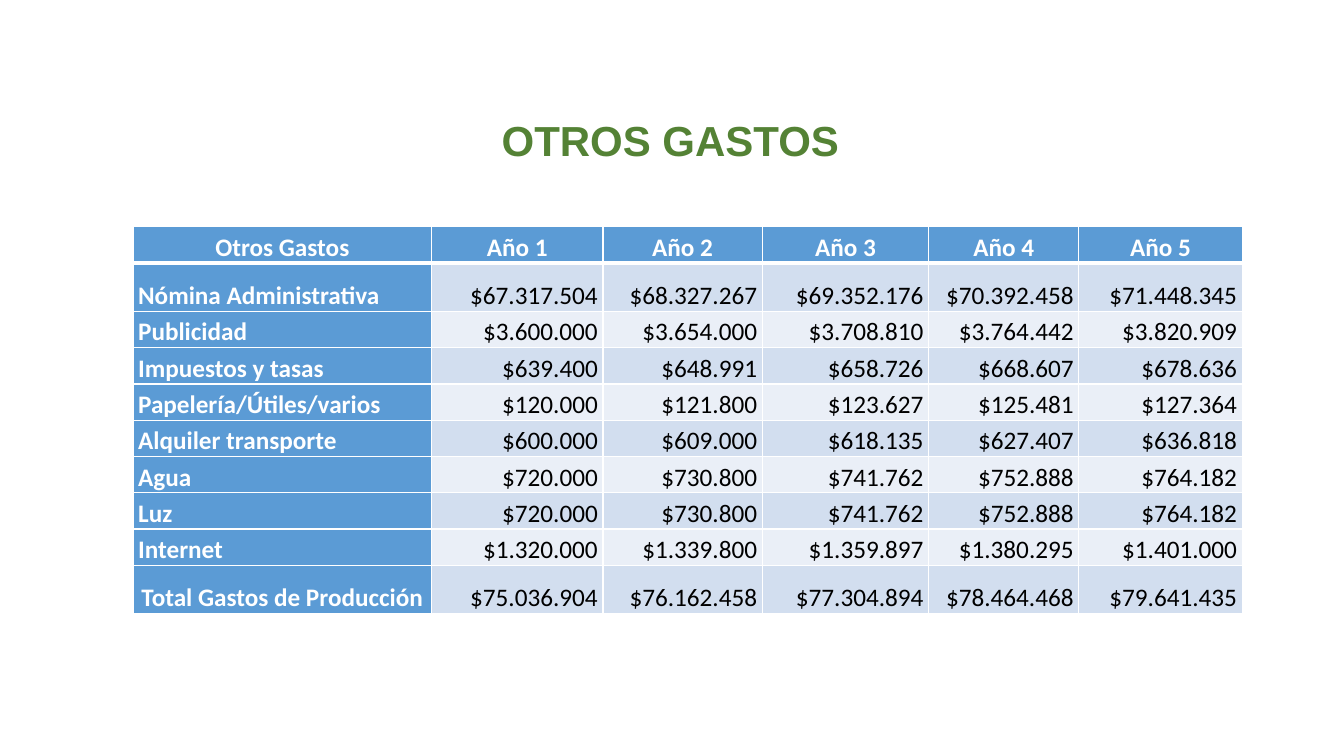
from lxml.etree import SubElement
from pptx import Presentation
from pptx.dml.color import RGBColor
from pptx.enum.text import MSO_ANCHOR, PP_ALIGN
from pptx.oxml.ns import qn
from pptx.util import Inches, Pt

WHITE, BLACK, GREEN = "FFFFFF", "000000", "548235"
BLUE, BANDS = "5B9BD5", ("EAEFF7", "D2DEEF")
WIDTHS = (2.96, 1.7, 1.58, 1.65, 1.49, 1.62)
HEIGHTS = (0.36, 0.48, *[0.36] * 7, 0.48)
ROWS = (
    ("Otros Gastos", "Año 1", "Año 2", "Año 3", "Año 4", "Año 5"),
    ("Nómina Administrativa", "$67.317.504", "$68.327.267", "$69.352.176", "$70.392.458", "$71.448.345"),
    ("Publicidad", "$3.600.000", "$3.654.000", "$3.708.810", "$3.764.442", "$3.820.909"),
    ("Impuestos y tasas", "$639.400", "$648.991", "$658.726", "$668.607", "$678.636"),
    ("Papelería/Útiles/varios", "$120.000", "$121.800", "$123.627", "$125.481", "$127.364"),
    ("Alquiler transporte", "$600.000", "$609.000", "$618.135", "$627.407", "$636.818"),
    ("Agua", "$720.000", "$730.800", "$741.762", "$752.888", "$764.182"),
    ("Luz", "$720.000", "$730.800", "$741.762", "$752.888", "$764.182"),
    ("Internet", "$1.320.000", "$1.339.800", "$1.359.897", "$1.380.295", "$1.401.000"),
    ("Total Gastos de Producción", "$75.036.904", "$76.162.458", "$77.304.894", "$78.464.468", "$79.641.435"),
)


def color(code):
    return RGBColor.from_string(code)


def write(para, text, face, size, code, bold, align, spacing):
    para.text = text
    para.alignment = align
    para.line_spacing = spacing
    font = para.font
    font.name, font.size, font.bold = face, Pt(size), bold
    font.color.rgb = color(code)


def add_title(slide, text):
    box = slide.shapes.add_textbox(Inches(0.35), Inches(1), Inches(12.6), Inches(0.83))
    frame = box.text_frame
    frame.word_wrap = True
    frame.vertical_anchor = MSO_ANCHOR.MIDDLE
    write(frame.paragraphs[0], text, "Arial", 30, GREEN, True, PP_ALIGN.CENTER, 0.9)


def add_borders(cell, top, bottom):
    """Draw white edges; top and bottom are widths in points."""
    props = cell._tc.get_or_add_tcPr()
    for side, width in (("L", 1), ("R", 1), ("T", top), ("B", bottom)):
        line = SubElement(props, qn(f"a:ln{side}"), w=str(Pt(width)))
        fill = SubElement(line, qn("a:solidFill"))
        SubElement(fill, qn("a:srgbClr"), val=WHITE)


def fill_cell(cell, text, row, col):
    head = row == 0 or col == 0
    if row == 0 or (col == 0 and row == len(ROWS) - 1):
        align = PP_ALIGN.CENTER
    else:
        align = PP_ALIGN.LEFT if col == 0 else PP_ALIGN.RIGHT
    cell.margin_left = cell.margin_right = Inches(0.05)
    cell.margin_top = cell.margin_bottom = 0
    cell.vertical_anchor = MSO_ANCHOR.BOTTOM
    add_borders(cell, 3 if row == 1 else 1, 3 if row == 0 else 1)
    cell.fill.solid()
    cell.fill.fore_color.rgb = color(BLUE if head else BANDS[row % 2])
    write(cell.text_frame.paragraphs[0], text, "Calibri", 18,
          WHITE if head else BLACK, head, align, 1.15)


def add_costs(slide):
    table = slide.shapes.add_table(
        len(ROWS), len(WIDTHS), Inches(1.32), Inches(2.25),
        Inches(sum(WIDTHS)), Inches(sum(HEIGHTS))).table
    table.first_col = True
    for column, width in zip(table.columns, WIDTHS):
        column.width = Inches(width)
    for line, height in zip(table.rows, HEIGHTS):
        line.height = Inches(height)
    for row, texts in enumerate(ROWS):
        for col, text in enumerate(texts):
            fill_cell(table.cell(row, col), text, row, col)


def main():
    deck = Presentation()
    deck.slide_width, deck.slide_height = Inches(13.33), Inches(7.5)
    slide = deck.slides.add_slide(deck.slide_layouts[6])
    add_title(slide, "OTROS GASTOS")
    add_costs(slide)
    deck.save("out.pptx")


if __name__ == "__main__":
    main()
